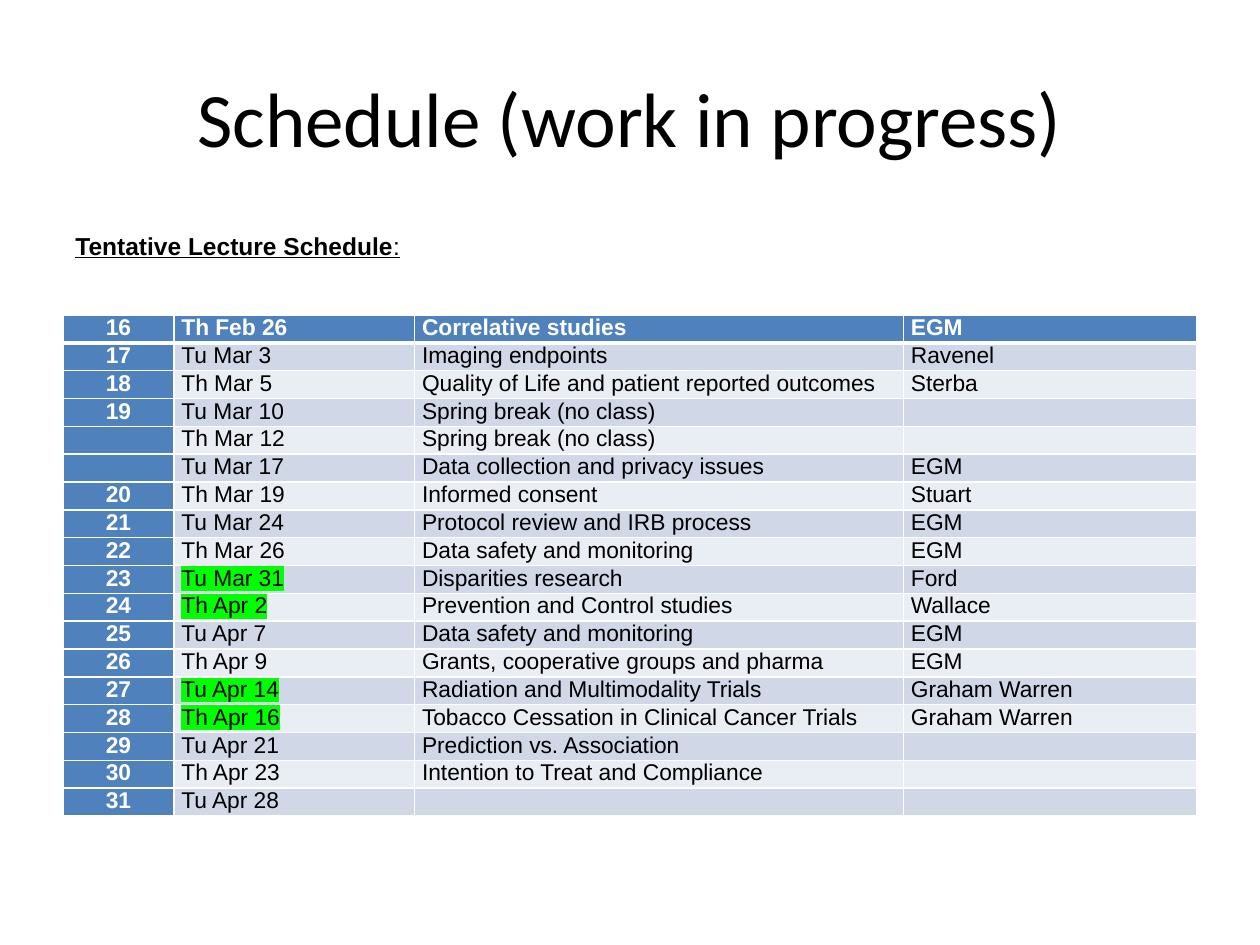
from lxml.etree import SubElement
from pptx import Presentation
from pptx.dml.color import RGBColor
from pptx.enum.text import MSO_ANCHOR, PP_ALIGN
from pptx.oxml import parse_xml
from pptx.oxml.ns import nsdecls, qn
from pptx.util import Inches, Pt

COLORS = {
    "text": "000000",
    "light": "FFFFFF",
    "accent": "4F81BD",
    "odd_row": "D0D8E8",
    "even_row": "E9EDF4",
    "highlight": "00FF00",
}
GRID = 0.5  # inches per column and row: 20 columns by 15 rows
COLUMN_WIDTHS = [1.76, 3.82, 7.76, 4.66]
ROW_HEIGHT = 7.96 / 18
HIGHLIGHTED_DATES = {"Tu Mar 31", "Th Apr 2", "Tu Apr 14", "Th Apr 16"}
LECTURES = [
    ("16", "Th Feb 26", "Correlative studies", "EGM"),
    ("17", "Tu Mar 3", "Imaging endpoints", "Ravenel"),
    ("18", "Th Mar 5", "Quality of Life and patient reported outcomes", "Sterba"),
    ("19", "Tu Mar 10", "Spring break (no class)", ""),
    ("", "Th Mar 12", "Spring break (no class)", ""),
    ("", "Tu Mar 17", "Data collection and privacy issues", "EGM"),
    ("20", "Th Mar 19", "Informed consent", "Stuart"),
    ("21", "Tu Mar 24", "Protocol review and IRB process", "EGM"),
    ("22", "Th Mar 26", "Data safety and monitoring", "EGM"),
    ("23", "Tu Mar 31", "Disparities research", "Ford"),
    ("24", "Th Apr 2", "Prevention and Control studies", "Wallace"),
    ("25", "Tu Apr 7", "Data safety and monitoring", "EGM"),
    ("26", "Th Apr 9", "Grants, cooperative groups and pharma", "EGM"),
    ("27", "Tu Apr 14", "Radiation and Multimodality Trials", "Graham Warren"),
    ("28", "Th Apr 16", "Tobacco Cessation in Clinical Cancer Trials", "Graham Warren"),
    ("29", "Tu Apr 21", "Prediction vs. Association", ""),
    ("30", "Th Apr 23", "Intention to Treat and Compliance", ""),
    ("31", "Tu Apr 28", "", ""),
]


def grid(units):
    return Inches(units * GRID)


def set_attributes(target, values):
    for name, value in values.items():
        setattr(target, name, value)


class SchedulePage:
    """Holds the text styles and the slide being filled."""

    title_font = {"name": "Calibri", "size": Pt(44)}
    heading_font = {"name": "Arial", "size": Pt(14), "underline": True}
    table_font = {"name": "Arial", "size": Pt(13)}
    cell_margins = {
        "margin_left": Inches(0.06),
        "margin_right": Inches(0.06),
        "margin_top": 0,
        "margin_bottom": 0,
    }

    def __init__(self, deck):
        self.page = deck.slides.add_slide(deck.slide_layouts[5])

    def add_span(self, para, text, font, color="text", bold=False):
        span = para.add_run()
        span.text = text
        set_attributes(span.font, {**font, "bold": bold})
        span.font.color.rgb = RGBColor.from_string(COLORS[color])
        return span

    def add_title(self, text, left, top, width, height):
        title = self.page.shapes.title
        set_attributes(title, {"left": grid(left), "top": grid(top),
                               "width": grid(width), "height": grid(height)})
        title.text_frame.vertical_anchor = MSO_ANCHOR.MIDDLE
        para = title.text_frame.paragraphs[0]
        para.alignment = PP_ALIGN.CENTER
        self.add_span(para, text, self.title_font)

    def add_heading(self, text, ending, left, top, width, height):
        box = self.page.shapes.add_textbox(*map(grid, (left, top, width, height)))
        set_attributes(box.text_frame, {"word_wrap": True, "margin_top": 0,
                                        "vertical_anchor": MSO_ANCHOR.TOP})
        para = box.text_frame.paragraphs[0]
        self.add_span(para, text, self.heading_font, bold=True)
        self.add_span(para, ending, self.heading_font)

    def add_table(self, rows, left, top, widths, row_height):
        frame = self.page.shapes.add_table(
            len(rows), len(widths), grid(left), grid(top),
            grid(sum(widths)), grid(row_height * len(rows)))
        table = frame.table
        table.first_col = True
        for column, width in zip(table.columns, widths):
            column.width = grid(width)
        for row_index, values in enumerate(rows):
            table.rows[row_index].height = grid(row_height)
            for column_index, text in enumerate(values):
                cell = table.cell(row_index, column_index)
                self.format_cell(cell, text, row_index, column_index)

    def format_cell(self, cell, text, row_index, column_index):
        is_header = row_index == 0 or column_index == 0
        band = "odd_row" if row_index % 2 else "even_row"
        set_attributes(cell, self.cell_margins)
        cell.fill.solid()
        cell.fill.fore_color.rgb = RGBColor.from_string(
            COLORS["accent" if is_header else band])
        self.add_borders(cell, top=3 if row_index == 1 else 1,
                         bottom=3 if row_index == 0 else 1)
        para = cell.text_frame.paragraphs[0]
        if column_index == 0:
            para.alignment = PP_ALIGN.CENTER
        if not text:
            size = self.table_font["size"].pt
            SubElement(para._p, qn("a:endParaRPr"), sz=str(int(size * 100)))
            return
        span = self.add_span(para, text, self.table_font,
                             "light" if is_header else "text", is_header)
        if text in HIGHLIGHTED_DATES:
            self.highlight(span)

    def add_borders(self, cell, top, bottom):
        properties = cell._tc.get_or_add_tcPr()
        sides = {"lnL": 1, "lnR": 1, "lnT": top, "lnB": bottom}
        for position, (side, points) in enumerate(sides.items()):
            properties.insert(position, parse_xml(
                f'<a:{side} {nsdecls("a")} w="{Pt(points)}"><a:solidFill>'
                f'<a:srgbClr val="{COLORS["light"]}"/></a:solidFill></a:{side}>'))

    def highlight(self, span):
        """Mark the text background; the schema wants it right after the fill."""
        fill = span._r.get_or_add_rPr().find(qn("a:solidFill"))
        fill.addnext(parse_xml(
            f'<a:highlight {nsdecls("a")}>'
            f'<a:srgbClr val="{COLORS["highlight"]}"/></a:highlight>'))


def main():
    deck = Presentation()
    deck.slide_width, deck.slide_height = grid(20), grid(15)
    schedule = SchedulePage(deck)
    schedule.add_title("Schedule (work in progress)", 1, 0.6, 18, 2.5)
    schedule.add_heading("Tentative Lecture Schedule", ":", 1, 3.66, 20, 1)
    schedule.add_table(LECTURES, 1, 5, COLUMN_WIDTHS, ROW_HEIGHT)
    deck.save("out.pptx")


if __name__ == "__main__":
    main()
